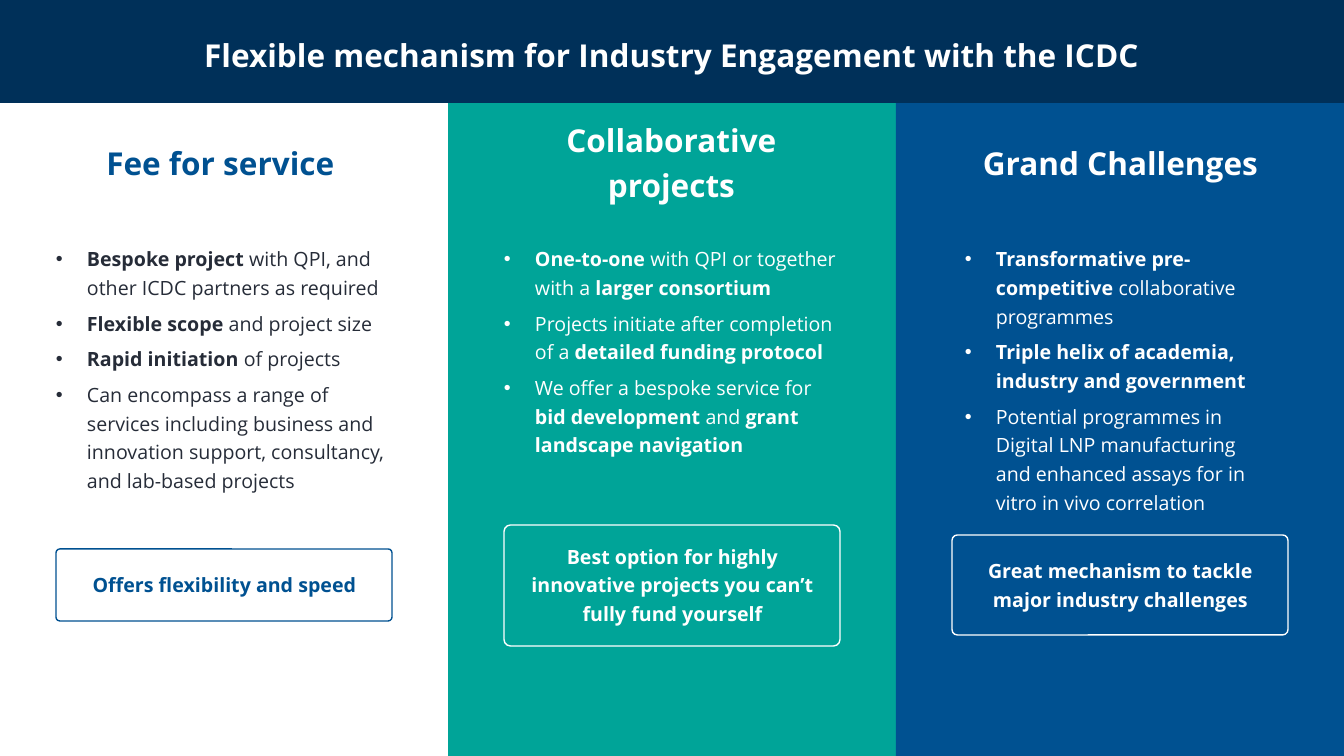
from lxml import etree
from pptx import Presentation
from pptx import util as u
from pptx.dml.color import RGBColor
from pptx.enum import shapes, text
from pptx.oxml.ns import qn

PX = 914400 / 100.8
W, H = 1344, 756
COL = W // 3
HEADER_H = 103
WHITE = RGBColor(0xFF, 0xFF, 0xFF)
NAVY = RGBColor(0x00, 0x30, 0x59)
BLUE = RGBColor(0x00, 0x51, 0x91)
TEAL = RGBColor(0x00, 0xA4, 0x98)
INK = RGBColor(0x26, 0x2C, 0x38)
FONT = "Open Sans"
HEAD = (22.5, 32)
BODY = (14, 20.5)

COLUMNS = [
    {
        "fill": WHITE, "accent": BLUE, "ink": INK,
        "heading": "Fee for service", "heading_x": 71,
        "list_x": 56, "list_w": 332,
        "bullets": [
            ["*Bespoke project", " with QPI, and other ICDC partners as required"],
            ["*Flexible scope ", "and project size"],
            ["*Rapid initiation ", "of projects"],
            ["Can encompass a range of services including business and "
             "innovation support, consultancy, and lab-based projects"],
        ],
        "box_y": 549, "box_h": 72, "label_y": 556, "label_h": 53,
        "label": "Offers flexibility and speed",
    },
    {
        "fill": TEAL, "accent": WHITE, "ink": WHITE,
        "heading": "Collaborative projects", "heading_x": 522,
        "list_x": 504, "list_w": 336,
        "bullets": [
            ["*One-to-one", " with QPI or together with a ", "*larger consortium"],
            ["Projects initiate after completion of a ",
             "*detailed funding protocol"],
            ["We offer a bespoke service for ", "*bid development ", "and ",
             "*grant landscape navigation"],
        ],
        "box_y": 525, "box_h": 121, "label_y": 535, "label_h": 95,
        "label": "Best option for highly innovative projects "
                 "you can’t fully fund yourself",
    },
    {
        "fill": BLUE, "accent": WHITE, "ink": WHITE,
        "heading": "Grand Challenges", "heading_x": 971,
        "list_x": 965, "list_w": 304,
        "bullets": [
            ["*Transformative pre-competitive ", "collaborative programmes"],
            ["*Triple helix of academia, industry and government"],
            ["Potential programmes in Digital LNP manufacturing and "
             "enhanced assays for in vitro in vivo correlation"],
        ],
        "box_y": 535, "box_h": 100, "label_y": 535, "label_h": 95,
        "label": "Great mechanism to tackle major industry challenges",
    },
]


def px(n):
    return round(n * PX)


def add_panel(s, x, y, w, h, fill, line=None):
    kind = shapes.MSO_SHAPE.ROUNDED_RECTANGLE if line else shapes.MSO_SHAPE.RECTANGLE
    sp = s.shapes.add_shape(kind, px(x), px(y), px(w), px(h))
    sp.shadow.inherit = False
    sp.fill.solid()
    sp.fill.fore_color.rgb = fill
    if line:
        sp.adjustments[0] = 0.054
        sp.line.color.rgb = line
        sp.line.width = u.Pt(1)
    else:
        sp.line.fill.background()
    return sp


def prepare_frame(sp, anchor):
    tf = sp.text_frame
    tf.word_wrap = True
    tf.vertical_anchor = anchor
    tf.margin_left = tf.margin_right = tf.margin_top = tf.margin_bottom = 0
    return tf


def style_paragraph(p, style, color):
    size, spacing = style
    p.line_spacing = u.Pt(spacing)
    for r in p.runs:
        r.font.name = FONT
        r.font.size = u.Pt(size)
        r.font.color.rgb = color


def set_centred(sp, words, style, color):
    tf = prepare_frame(sp, text.MSO_ANCHOR.MIDDLE)
    tf.text = words
    p = tf.paragraphs[0]
    p.alignment = text.PP_ALIGN.CENTER
    style_paragraph(p, style, color)
    p.runs[0].font.bold = True


def add_centred(s, x, y, w, h, words, style, color):
    sp = s.shapes.add_textbox(px(x), px(y), px(w), px(h))
    set_centred(sp, words, style, color)


def add_bullets(s, x, y, w, h, items, color):
    sp = s.shapes.add_textbox(px(x), px(y), px(w), px(h))
    tf = prepare_frame(sp, text.MSO_ANCHOR.TOP)
    for i, item in enumerate(items):
        p = tf.add_paragraph() if i else tf.paragraphs[0]
        pPr = p._p.get_or_add_pPr()
        pPr.set("marL", str(px(31)))
        pPr.set("indent", str(-px(31)))
        etree.SubElement(pPr, qn("a:buFont"), typeface="Arial")
        etree.SubElement(pPr, qn("a:buChar"), char="•")
        if i:
            p.space_before = u.Pt(5)
        for part in item:
            r = p.add_run()
            r.text = part.removeprefix("*")
            r.font.bold = part.startswith("*")
        style_paragraph(p, BODY, color)


def add_column(s, i, c):
    x = i * COL
    if c["fill"] != TEAL:
        add_panel(s, x, 0, COL, H, c["fill"])
    add_centred(s, c["heading_x"], 116, 299, 86, c["heading"], HEAD, c["accent"])
    add_bullets(s, c["list_x"], 242, c["list_w"], 302, c["bullets"], c["ink"])
    add_panel(s, x + 56, c["box_y"], 336, c["box_h"], c["fill"], c["accent"])
    add_centred(s, x + 74, c["label_y"], 301, c["label_h"], c["label"], BODY, c["accent"])


def main():
    prs = Presentation()
    prs.slide_width, prs.slide_height = px(W), px(H)
    s = prs.slides.add_slide(prs.slide_layouts[6])
    s.background.fill.solid()
    s.background.fill.fore_color.rgb = TEAL
    for i, c in enumerate(COLUMNS):
        add_column(s, i, c)
    header = add_panel(s, 0, 0, W, HEADER_H, NAVY)
    set_centred(header, "Flexible mechanism for Industry Engagement with the ICDC",
                HEAD, WHITE)
    prs.save("out.pptx")


if __name__ == "__main__":
    main()
